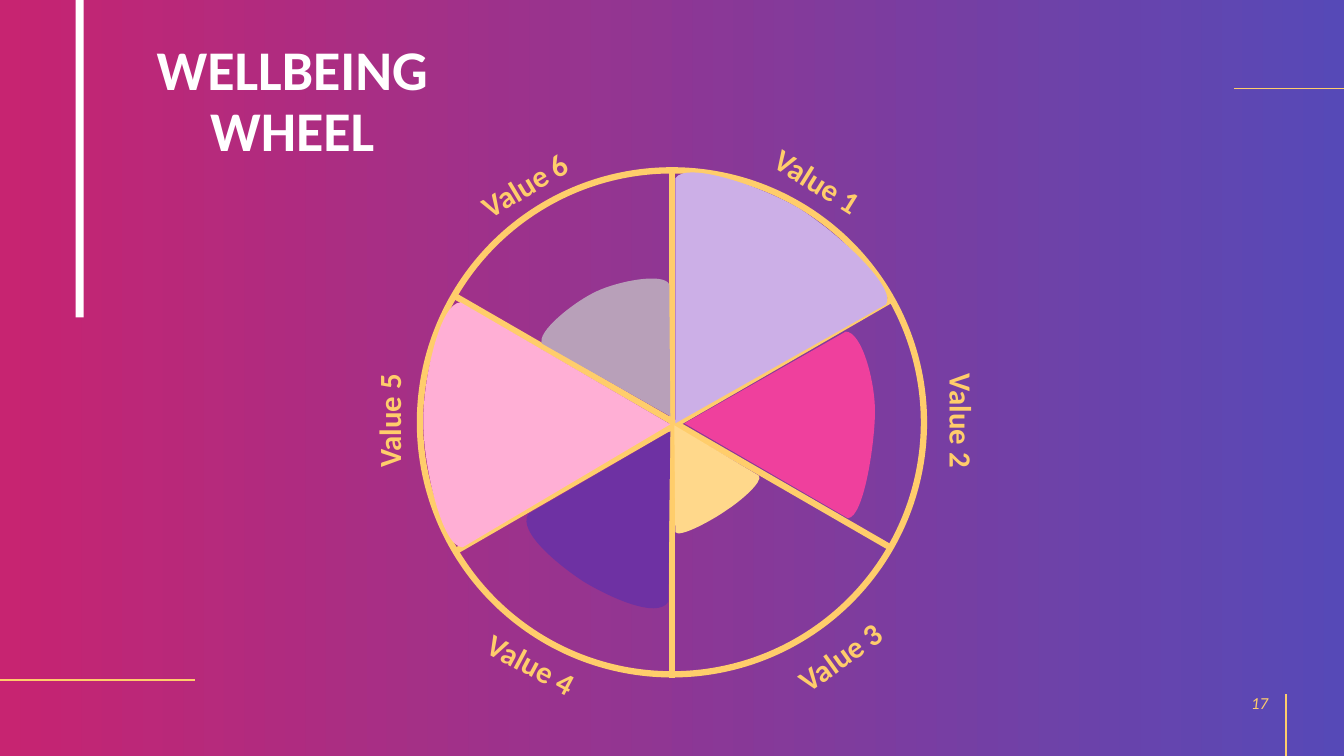
from lxml import etree
from pptx import Presentation
from pptx import util as u
from pptx.dml.color import RGBColor
from pptx.enum import shapes, text
from pptx.oxml.ns import qn

GOLD, WHITE = "FFCD6B", "FFFFFF"
ALIGN, ANCHOR = text.PP_ALIGN, text.MSO_ANCHOR
WIDE = 40 / 3
MID = WIDE / 2

deck = Presentation()
deck.slide_width, deck.slide_height = u.Inches(WIDE), u.Inches(7.5)
slide = deck.slides.add_slide(deck.slide_layouts[6])
items = slide.shapes


def paint(fill, color):
    fill.solid()
    fill.fore_color.rgb = RGBColor.from_string(color)


def write(words, box, size, color=GOLD, bold=False, italic=False, align=ALIGN.CENTER,
          anchor=ANCHOR.TOP, space=1.0, turn=0, grow=False):
    label = items.add_textbox(*map(u.Inches, box))
    label.rotation = turn
    frame = label.text_frame
    frame.word_wrap = True
    frame.vertical_anchor = anchor
    if grow:
        frame.auto_size = text.MSO_AUTO_SIZE.SHAPE_TO_FIT_TEXT
    para = frame.paragraphs[0]
    para.alignment, para.line_spacing = align, space
    run = para.add_run()
    run.text = words
    font = run.font
    font.name, font.size, font.bold, font.italic = "Calibri", u.Pt(size), bold, italic
    paint(font.fill, color)


# Backdrop with a slightly see-through gradient
back = items.add_shape(shapes.MSO_SHAPE.RECTANGLE, 0, 0, deck.slide_width, deck.slide_height)
back.shadow.inherit = False
back.line.fill.background()
back.fill.gradient()
back.fill.gradient_angle = 0
for stop, place, color in zip(back.fill.gradient_stops, (0, 1), ("BE005A", "3B2CAC")):
    stop.position = place
    stop.color.rgb = RGBColor.from_string(color)
for tint in back._element.spPr.iter(qn("a:srgbClr")):
    etree.SubElement(tint, qn("a:alpha"), val="85000")

# Title, page number and white bar
write("WELLBEING WHEEL", (0.75, 0.62, 4.3, 1.05), 40, WHITE, bold=True,
      anchor=ANCHOR.BOTTOM, space=0.9)
write("17", (9.68, 6.77, 3, 0.4), 12, italic=True, align=ALIGN.RIGHT, anchor=ANCHOR.MIDDLE)
bar = items.add_shape(shapes.MSO_SHAPE.RECTANGLE,
                      *map(u.Inches, (0.75, 0, 0.08, 3.15)))
bar.shadow.inherit = False
bar.line.fill.background()
paint(bar.fill, WHITE)

# Edge rules, then the three spokes
for ends, width in (
    ((12.24, 0.88, WIDE, 0.88), 0.5),
    ((0, 6.75, 1.93, 6.75), 1.5),
    ((12.76, 7.5, 12.76, 6.89), 1.5),
    ((MID, 1.69, MID, 6.73), 4.5),
    ((8.83, 2.98, 4.5, 5.48), 4.5),
    ((8.83, 5.43, 4.5, 2.93), 4.5),
):
    rule = items.add_connector(shapes.MSO_CONNECTOR.STRAIGHT, *map(u.Inches, ends))
    rule.line.width = u.Pt(width)
    paint(rule.line.fill, GOLD)
    etree.SubElement(rule._element.spPr, qn("a:effectLst"))

# Rim
rim = items.add_shape(shapes.MSO_SHAPE.OVAL, *map(u.Inches, (MID - 2.5, 1.69, 5, 5)))
rim.shadow.inherit = False
rim.fill.background()
rim.line.width = u.Pt(4.5)
paint(rim.line.fill, GOLD)

# Labels around the rim
for num, left, top, turn in (
    (6, 4.51, 1.6, 329), (2, 8.85, 3.94, 90), (1, 7.42, 1.56, 32),
    (3, 7.64, 6.28, 324.4), (4, 4.58, 6.35, 28.1), (5, 3.17, 3.94, 270),
):
    write(f"Value {num}", (left, top, 1.38, 0.47), 22, bold=True, turn=turn, grow=True)

# Wedges: hub point, then the outer edge as two cubic curves
wedges = (
    ("B8A0B9", (6.65, 4.13), [(5.38, 3.41), (5.31, 3.3), (5.7, 2.99), (5.92, 2.89),
                              (6.13, 2.79), (6.58, 2.7), (6.64, 2.82)]),
    ("CCAFE7", (6.7, 4.2), [(6.7, 1.77), (6.81, 1.59), (7.58, 1.86), (7.93, 2.07),
                            (8.27, 2.28), (8.9, 2.84), (8.79, 3.02)]),
    ("EF409D", (6.79, 4.2), [(8.39, 3.29), (8.55, 3.29), (8.68, 3.78), (8.68, 4.08),
                             (8.68, 4.39), (8.57, 5.14), (8.41, 5.14)]),
    ("FFD88B", (6.69, 4.22), [(7.53, 4.72), (7.57, 4.78), (7.35, 4.97), (7.21, 5.06),
                              (7.07, 5.16), (6.74, 5.34), (6.7, 5.28)]),
    ("FFAFD5", (6.65, 4.21), [(4.59, 5.43), (4.38, 5.43), (4.2, 4.6), (4.2, 4.2),
                              (4.19, 3.8), (4.36, 3), (4.57, 3)]),
    ("6E31A3", (6.65, 4.28), [(6.63, 5.97), (6.52, 6.15), (6.02, 5.91), (5.79, 5.77),
                              (5.56, 5.62), (5.13, 5.28), (5.24, 5.1)]),
)
for color, hub, edge in wedges:
    pen = items.build_freeform(*map(u.Inches, hub))
    pen.add_line_segments([(u.Inches(x), u.Inches(y)) for x, y in edge[::3]], close=True)
    wedge = pen.convert_to_shape()
    wedge.shadow.inherit = False
    wedge.line.fill.background()
    paint(wedge.fill, color)
    # Bend the two outer sides with their control points
    sides = list(wedge._element.spPr.iter(qn("a:lnTo")))[1:3]
    for side, bend in zip(sides, (edge[1:3], edge[4:6])):
        curve = etree.Element(qn("a:cubicBezTo"))
        for x, y in bend:
            etree.SubElement(curve, qn("a:pt"), x=str(u.Inches(x) - wedge.left),
                             y=str(u.Inches(y) - wedge.top))
        curve.append(side[0])
        side.getparent().replace(side, curve)

deck.save("out.pptx")
